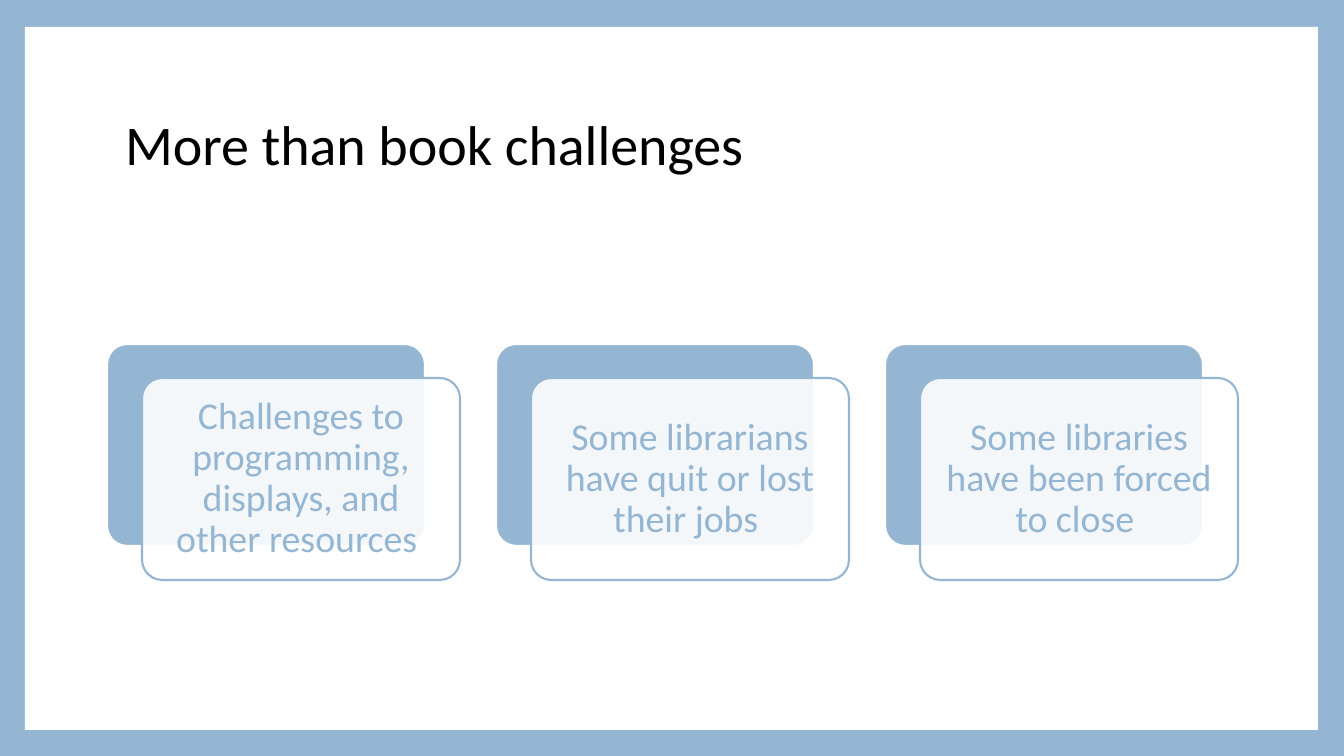
from lxml.etree import SubElement
from pptx import Presentation
from pptx.dml.color import RGBColor
from pptx.enum.shapes import MSO_SHAPE
from pptx.enum.text import MSO_ANCHOR, PP_ALIGN
from pptx.oxml.ns import qn
from pptx.util import Pt

PX = 914400 / 100.8
BLUE = "94B6D2"
WHITE = "FFFFFF"


def px(*lengths):
    return [round(length * PX) for length in lengths]


def paint(color_format, color):
    color_format.solid()
    color_format.fore_color.rgb = RGBColor.from_string(color)


prs = Presentation()
prs.slide_width, prs.slide_height = px(1344, 756)
slide = prs.slides.add_slide(prs.slide_layouts[5])
paint(slide.background.fill, BLUE)

page = slide.shapes.add_shape(MSO_SHAPE.RECTANGLE, *px(25, 27, 1293, 703))
page.shadow.inherit = False
paint(page.fill, WHITE)
page.line.fill.background()
slide.shapes._spTree.insert(2, page._element)

title = slide.shapes.title
title.left, title.top, title.width, title.height = px(120, 82, 852, 131)
frame = title.text_frame
frame.text = "More than book challenges"
frame.word_wrap = True
frame.vertical_anchor = MSO_ANCHOR.MIDDLE
frame.margin_left, frame.margin_top, frame.margin_right, frame.margin_bottom = px(5, 5, 5, 5)
heading = frame.paragraphs[0]
heading.alignment = PP_ALIGN.LEFT
heading.line_spacing = 0.9
heading.font.size = Pt(40)
heading.font.name = "Calibri"
paint(heading.font.fill, "000000")

impacts = [
    "Challenges to programming, displays, and other resources ",
    "Some librarians have quit or lost their jobs ",
    "Some libraries have been forced to close ",
]
for column, impact in enumerate(impacts):
    left = 107 + 389 * column
    backing = slide.shapes.add_shape(MSO_SHAPE.ROUNDED_RECTANGLE, *px(left, 344, 318, 202))
    card = slide.shapes.add_shape(MSO_SHAPE.ROUNDED_RECTANGLE, *px(left + 35, 378, 318, 202))
    for panel, fill, outline in [(backing, BLUE, WHITE), (card, WHITE, BLUE)]:
        panel.adjustments[0] = 0.1
        panel.shadow.inherit = False
        paint(panel.fill, fill)
        paint(panel.line.fill, outline)
        panel.line.width = Pt(1.5)
    card_color = card._element.spPr.find(qn("a:solidFill")).find(qn("a:srgbClr"))
    SubElement(card_color, qn("a:alpha"), val="90000")

    frame = card.text_frame
    frame.text = impact
    frame.word_wrap = True
    frame.vertical_anchor = MSO_ANCHOR.MIDDLE
    frame.margin_left, frame.margin_top, frame.margin_right, frame.margin_bottom = px(15, 15, 15, 15)
    statement = frame.paragraphs[0]
    statement.alignment = PP_ALIGN.CENTER
    statement.line_spacing = 0.9
    statement.space_before = Pt(11)
    statement.font.size = Pt(27)
    statement.font.name = "Calibri"
    paint(statement.font.fill, BLUE)

prs.save("out.pptx")
